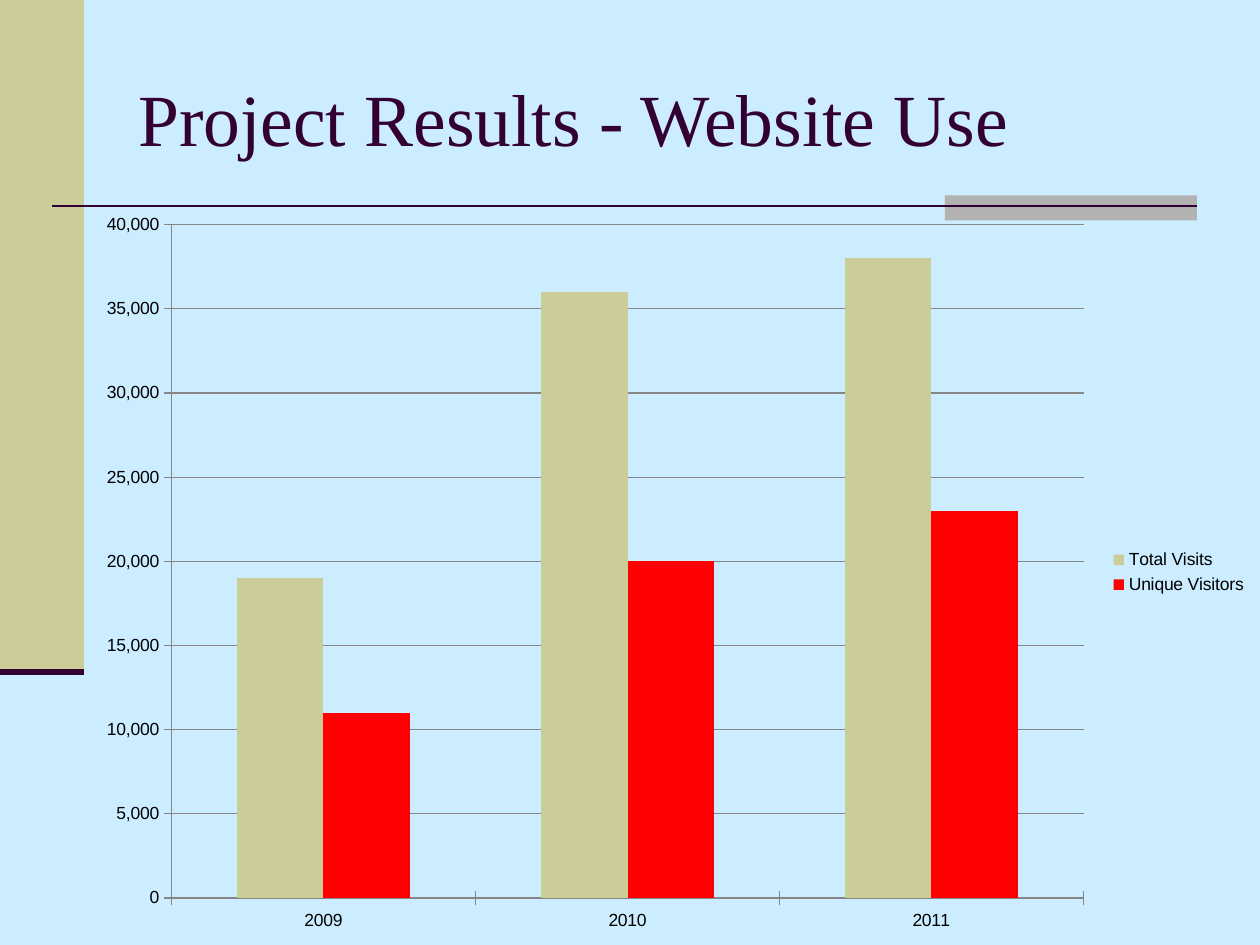
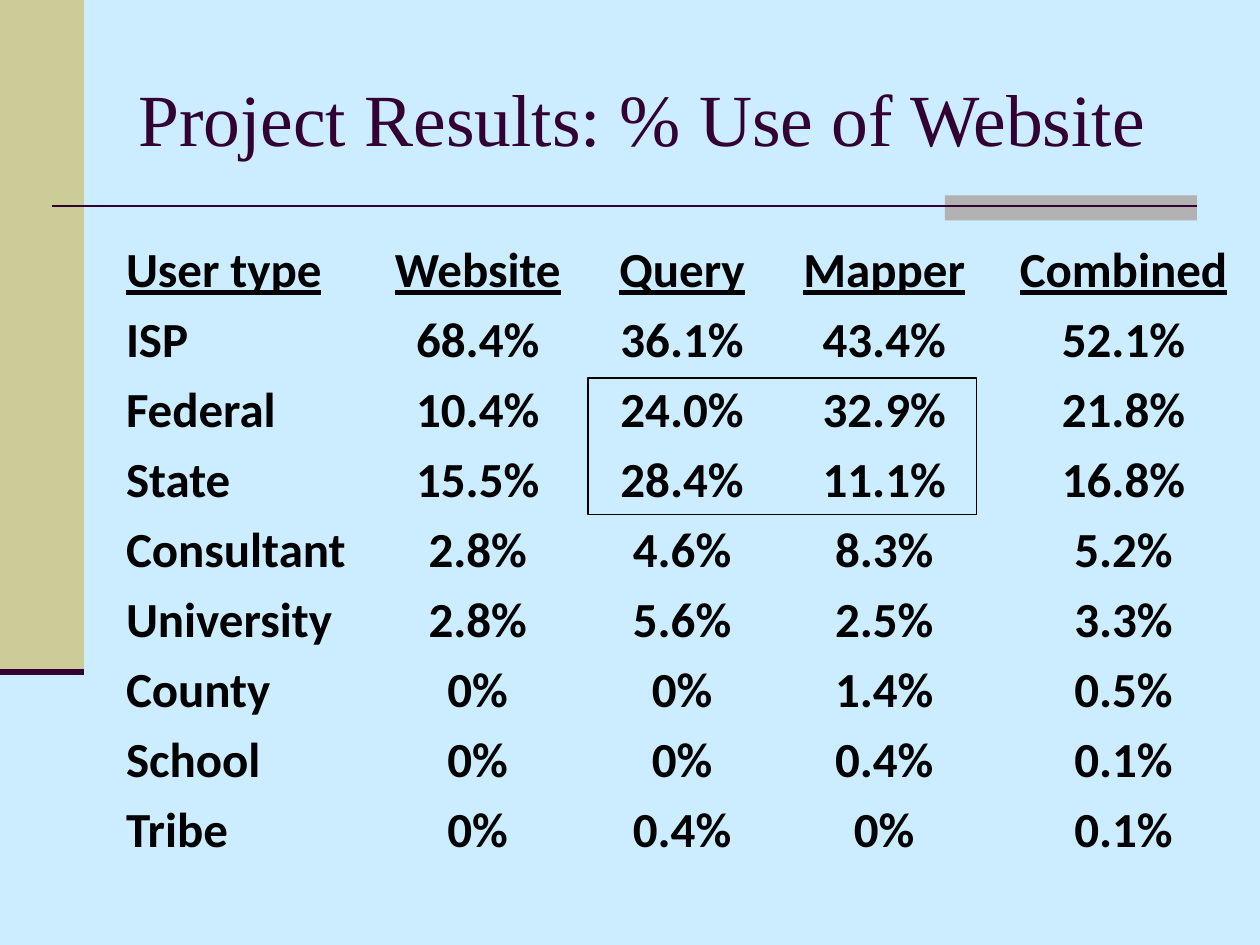
"""Builds two slides on website use: a column chart and a table of user types."""
from dataclasses import dataclass

from lxml import etree
from pptx import Presentation
from pptx.chart.data import CategoryChartData
from pptx.dml.color import RGBColor
from pptx.enum.chart import XL_CHART_TYPE, XL_LEGEND_POSITION, XL_TICK_MARK
from pptx.enum.shapes import MSO_CONNECTOR, MSO_SHAPE
from pptx.enum.text import MSO_ANCHOR, PP_ALIGN
from pptx.oxml.ns import qn
from pptx.util import Pt

COLUMNS = XL_CHART_TYPE.COLUMN_CLUSTERED
LEGEND_RIGHT = XL_LEGEND_POSITION.RIGHT
CROSS = XL_TICK_MARK.CROSS
STRAIGHT = MSO_CONNECTOR.STRAIGHT
RECT = MSO_SHAPE.RECTANGLE
MIDDLE, BOTTOM = MSO_ANCHOR.MIDDLE, MSO_ANCHOR.BOTTOM
LEFT, CENTER = PP_ALIGN.LEFT, PP_ALIGN.CENTER
NO_GRID_STYLE = "{2D5ABB26-0587-4C30-8999-92F81FD0307C}"


@dataclass(frozen=True)
class Theme:
    """Colours, fonts and type sizes of the deck."""
    sky: str = "CCECFF"
    khaki: str = "CCCC99"
    grey: str = "B2B2B2"
    plum: str = "330033"
    red: str = "FF0000"
    black: str = "000000"
    axis: str = "868686"
    title_font: str = "Times New Roman"
    table_font: str = "Calibri"
    chart_font: str = "Arial"
    title_size: int = 42
    table_size: int = 28
    chart_size: int = 10


class Deck:
    """Holds the theme and the current slide, and draws elements on it."""

    def __init__(self, theme):
        self.theme = theme
        self.prs = Presentation()
        self.prs.slide_width, self.prs.slide_height = Pt(720), Pt(540)
        self.s = None

    def slide(self, title):
        """Start a slide with the shared bands, rules and title."""
        t = self.theme
        self.s = self.prs.slides.add_slide(self.prs.slide_layouts[6])
        fill = self.s.background.fill
        fill.solid()
        fill.fore_color.rgb = RGBColor.from_string(t.sky)
        self.rect(0, 0, 48, 384, fill=t.khaki)
        self.rect(540, 111.6, 144, 14.4, fill=t.grey)
        self.rule(30, 684, 117.7, 1.5)
        self.rule(0, 48, 384, 3.5)
        self.title(title)

    def rect(self, x, y, w, h, fill=None, line=None):
        """Draw a rectangle with an optional fill and outline."""
        sp = self.s.shapes.add_shape(RECT, Pt(x), Pt(y), Pt(w), Pt(h))
        sp.shadow.inherit = False
        for part, color in ((sp.fill, fill), (sp.line.fill, line)):
            if color:
                part.solid()
                part.fore_color.rgb = RGBColor.from_string(color)
            else:
                part.background()
        if line:
            sp.line.width = Pt(1)

    def rule(self, x1, x2, y, weight):
        """Draw a horizontal line."""
        c = self.s.shapes.add_connector(STRAIGHT, Pt(x1), Pt(y), Pt(x2), Pt(y))
        c.line.color.rgb = RGBColor.from_string(self.theme.plum)
        c.line.width = Pt(weight)
        etree.SubElement(c._element.spPr, qn("a:effectLst"))

    def style(self, font, name, size, color):
        """Set the face, size and colour of a font."""
        font.name, font.size = name, Pt(size)
        font.color.rgb = RGBColor.from_string(color)

    def title(self, text):
        """Write the slide title."""
        t = self.theme
        sp = self.s.shapes.add_textbox(Pt(72), Pt(22), Pt(612), Pt(90))
        tf = sp.text_frame
        tf.word_wrap = True
        tf.vertical_anchor = MIDDLE
        r = tf.paragraphs[0].add_run()
        r.text = text
        self.style(r.font, t.title_font, t.title_size, t.plum)

    def chart(self, x, y, w, h, cats, series, plot_area):
        """Draw a column chart; series maps a name to its colour and values."""
        t = self.theme
        data = CategoryChartData(number_format="#,##0")
        data.categories = cats
        for name, (_, values) in series.items():
            data.add_series(name, values)
        chart = self.s.shapes.add_chart(
            COLUMNS, Pt(x), Pt(y), Pt(w), Pt(h), data).chart
        self.style(chart.font, t.chart_font, t.chart_size, t.black)
        chart.has_title = False
        chart.has_legend = True
        chart.legend.position = LEGEND_RIGHT
        chart.legend.include_in_layout = False
        plot = chart.plots[0]
        plot.vary_by_categories = False
        plot.gap_width, plot.overlap = 150, 0
        for ser, (color, _) in zip(plot.series, series.values()):
            ser.format.fill.solid()
            ser.format.fill.fore_color.rgb = RGBColor.from_string(color)
        value_axis = chart.value_axis
        value_axis.minimum_scale, value_axis.maximum_scale = 0, 40000
        value_axis.major_unit = 5000
        value_axis.has_major_gridlines = True
        value_axis.tick_labels.number_format = "#,##0"
        value_axis.tick_labels.number_format_is_linked = False
        chart.category_axis.major_tick_mark = CROSS
        value_axis.major_tick_mark = CROSS
        for part in (chart.category_axis, value_axis, value_axis.major_gridlines):
            part.format.line.color.rgb = RGBColor.from_string(t.axis)
            part.format.line.width = Pt(0.75)
        self.place_plot(chart, plot_area)

    def place_plot(self, chart, plot_area):
        """Fix the inner plot area, given in points, as fractions of the chart."""
        area = chart._chartSpace.chart.plotArea
        for old in area.findall(qn("c:layout")):
            area.remove(old)
        layout = etree.Element(qn("c:layout"))
        area.insert(0, layout)
        manual = etree.SubElement(layout, qn("c:manualLayout"))
        settings = [("layoutTarget", "inner"), ("xMode", "edge"), ("yMode", "edge")]
        for tag, val in settings + list(zip("xywh", plot_area)):
            etree.SubElement(manual, qn(f"c:{tag}"), val=str(val))

    def table(self, x, y, widths, row_height, rows):
        """Draw a plain table with an underlined header row."""
        t = self.theme
        table = self.s.shapes.add_table(
            len(rows), len(widths), Pt(x), Pt(y),
            Pt(sum(widths)), Pt(row_height * len(rows))).table
        table.first_row = table.horz_banding = False
        table._tbl.tblPr.find(qn("a:tableStyleId")).text = NO_GRID_STYLE
        for col, width in zip(table.columns, widths):
            col.width = Pt(width)
        for i, row in enumerate(rows):
            table.rows[i].height = Pt(row_height)
            for j, text in enumerate(row):
                cell = table.cell(i, j)
                cell.fill.background()
                cell.vertical_anchor = BOTTOM
                cell.margin_left = cell.margin_right = 0
                cell.margin_top = cell.margin_bottom = 0
                p = cell.text_frame.paragraphs[0]
                p.alignment = CENTER if j else LEFT
                r = p.add_run()
                r.text = text
                self.style(r.font, t.table_font, t.table_size, t.black)
                r.font.bold = True
                r.font.underline = i == 0


def main():
    """Build both slides and save the deck."""
    theme = Theme()
    deck = Deck(theme)

    deck.slide("Project Results - Website Use")
    visits = {
        "Total Visits": (theme.khaki, (19000, 36000, 38000)),
        "Unique Visitors": (theme.red, (11000, 20000, 23000)),
    }
    chart_x, chart_y, chart_w, chart_h = 48, 114, 672, 426
    plot_area = ((98 - chart_x) / chart_w, (128.4 - chart_y) / chart_h,
                 521.2 / chart_w, 384.8 / chart_h)
    deck.chart(chart_x, chart_y, chart_w, chart_h,
               ("2009", "2010", "2011"), visits, plot_area)

    deck.slide("Project Results: % Use of Website")
    usage = [
        ("User type", "Website", "Query", "Mapper", "Combined"),
        ("ISP", "68.4%", "36.1%", "43.4%", "52.1%"),
        ("Federal", "10.4%", "24.0%", "32.9%", "21.8%"),
        ("State", "15.5%", "28.4%", "11.1%", "16.8%"),
        ("Consultant", "2.8%", "4.6%", "8.3%", "5.2%"),
        ("University", "2.8%", "5.6%", "2.5%", "3.3%"),
        ("County", "0%", "0%", "1.4%", "0.5%"),
        ("School", "0%", "0%", "0.4%", "0.1%"),
        ("Tribe", "0%", "0.4%", "0%", "0.1%"),
    ]
    deck.table(72, 132, (141, 120, 113.5, 117.5, 156), 40, usage)
    deck.rect(336, 216, 222, 78, line=theme.black)

    deck.prs.save("out.pptx")


if __name__ == "__main__":
    main()
